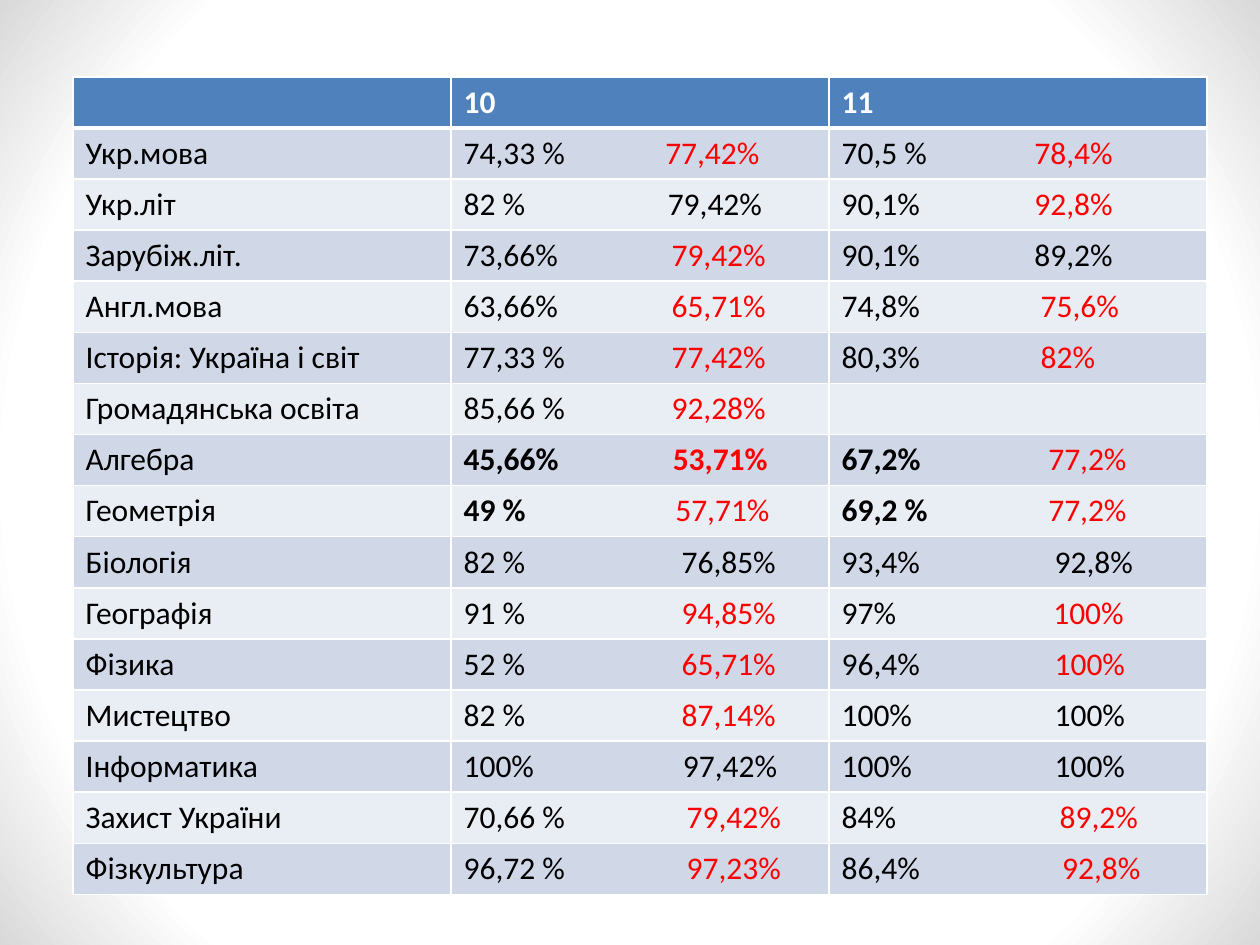
from lxml.etree import SubElement
from pptx import Presentation
from pptx.dml.color import RGBColor
from pptx.oxml import parse_xml
from pptx.oxml.ns import nsdecls, qn
from pptx.util import Inches, Pt

COLORS = {"header": "4F81BD", "odd": "D0D8E8", "even": "E9EDF4", "white": "FFFFFF",
          "edge": "D9D9D9", "text": "000000", "rise": "FF0000"}
HEADER = ["", "10", "11"]
# subject, then for each class: earlier result, tab position in inches, later result
RESULTS = [
    ("Укр.мова", ("74,33 %", 1.6, "77,42%"), ("70,5 %", 1.53, "78,4%")),
    ("Укр.літ", ("82 %", 1.62, "79,42%"), ("90,1%", 1.53, "92,8%")),
    ("Зарубіж.літ.", ("73,66%", 1.65, "79,42%"), ("90,1%", 1.53, "89,2%")),
    ("Англ.мова", ("63,66%", 1.65, "65,71%"), ("74,8%", 1.58, "75,6%")),
    ("Історія: Україна і світ", ("77,33 %", 1.65, "77,42%"), ("80,3%", 1.58, "82%")),
    ("Громадянська освіта", ("85,66 %", 1.65, "92,28%"), None),
    ("Алгебра", ("45,66%", 1.66, "53,71%"), ("67,2%", 1.64, "77,2%")),
    ("Геометрія", ("49 %", 1.68, "57,71%"), ("69,2 %", 1.64, "77,2%")),
    ("Біологія", ("82 %", 1.73, "76,85%"), ("93,4%", 1.69, "92,8%")),
    ("Географія", ("91 %", 1.73, "94,85%"), ("97%", 1.68, "100%")),
    ("Фізика", ("52 %", 1.73, "65,71%"), ("96,4%", 1.69, "100%")),
    ("Мистецтво", ("82 %", 1.73, "87,14%"), ("100%", 1.69, "100%")),
    ("Інформатика", ("100%", 1.74, "97,42%"), ("100%", 1.69, "100%")),
    ("Захист України", ("70,66 %", 1.77, "79,42%"), ("84%", 1.73, "89,2%")),
    ("Фізкультура", ("96,72 %", 1.77, "97,23%"), ("86,4%", 1.75, "92,8%")),
]
BOLD = {"45,66%", "53,71%", "67,2%", "49 %", "69,2 %"}


def rgb(name):
    return RGBColor.from_string(COLORS[name])


def percent(text):
    return float(text.strip(" %").replace(",", "."))


def paint_background(s):
    fill = s.background.fill
    fill.gradient()
    for stop, (position, color) in zip(fill.gradient_stops, [(0.79, "white"), (1, "edge")]):
        stop.position = position
        stop.color.rgb = rgb(color)
    grad = s.element.find(".//" + qn("a:gradFill"))
    grad.replace(grad.find(qn("a:lin")), parse_xml(
        f'<a:path {nsdecls("a")} path="circle">'
        '<a:fillToRect l="50000" t="50000" r="50000" b="50000"/></a:path>'))


def add_run(p, text, color="text", bold=False):
    r = p.add_run()
    r.text = text
    for name, value in {"name": "Calibri", "size": Pt(18), "bold": bold}.items():
        setattr(r.font, name, value)
    r.font.color.rgb = rgb(color)


def set_tab(p, inches):
    tabs = SubElement(p._p.get_or_add_pPr(), qn("a:tabLst"))
    SubElement(tabs, qn("a:tab"), pos=str(Inches(inches)), algn="l")


def fill_pair(p, pair):
    """Write two results of a class; the later one is red when it has risen."""
    before, tab, after = pair
    set_tab(p, tab)
    add_run(p, before + "\t", bold=before in BOLD)
    color = "rise" if percent(after) > percent(before) else "text"
    add_run(p, after, color, after in BOLD)


def format_cell(cell, row):
    cell.fill.solid()
    cell.fill.fore_color.rgb = rgb("header" if row == 0 else "odd" if row % 2 else "even")
    widths = {"L": 1, "R": 1, "T": 3 if row == 1 else 1, "B": 3 if row == 0 else 1}
    tcPr = cell._tc.get_or_add_tcPr()
    for i, (side, width) in enumerate(widths.items()):
        tcPr.insert(i, parse_xml(
            f'<a:ln{side} {nsdecls("a")} w="{Pt(width)}"><a:solidFill>'
            f'<a:srgbClr val="{COLORS["white"]}"/></a:solidFill></a:ln{side}>'))


def add_results_table(s, left, top, width, height):
    rows = [HEADER, *RESULTS]
    table = s.shapes.add_table(len(rows), len(HEADER), left, top, width, height).table
    for i, values in enumerate(rows):
        for j, value in enumerate(values):
            cell = table.cell(i, j)
            format_cell(cell, i)
            p = cell.text_frame.paragraphs[0]
            if not value:
                p.font.size = Pt(18)
            elif i == 0:
                add_run(p, value, "white", True)
            elif j == 0:
                add_run(p, value)
            else:
                fill_pair(p, value)


def main():
    prs = Presentation()
    prs.slide_width, prs.slide_height = Inches(10), Inches(7.5)
    s = prs.slides.add_slide(prs.slide_layouts[6])
    paint_background(s)
    add_results_table(s, Inches(0.58), Inches(0.61), Inches(9), Inches(6.49))
    prs.save("out.pptx")


if __name__ == "__main__":
    main()
